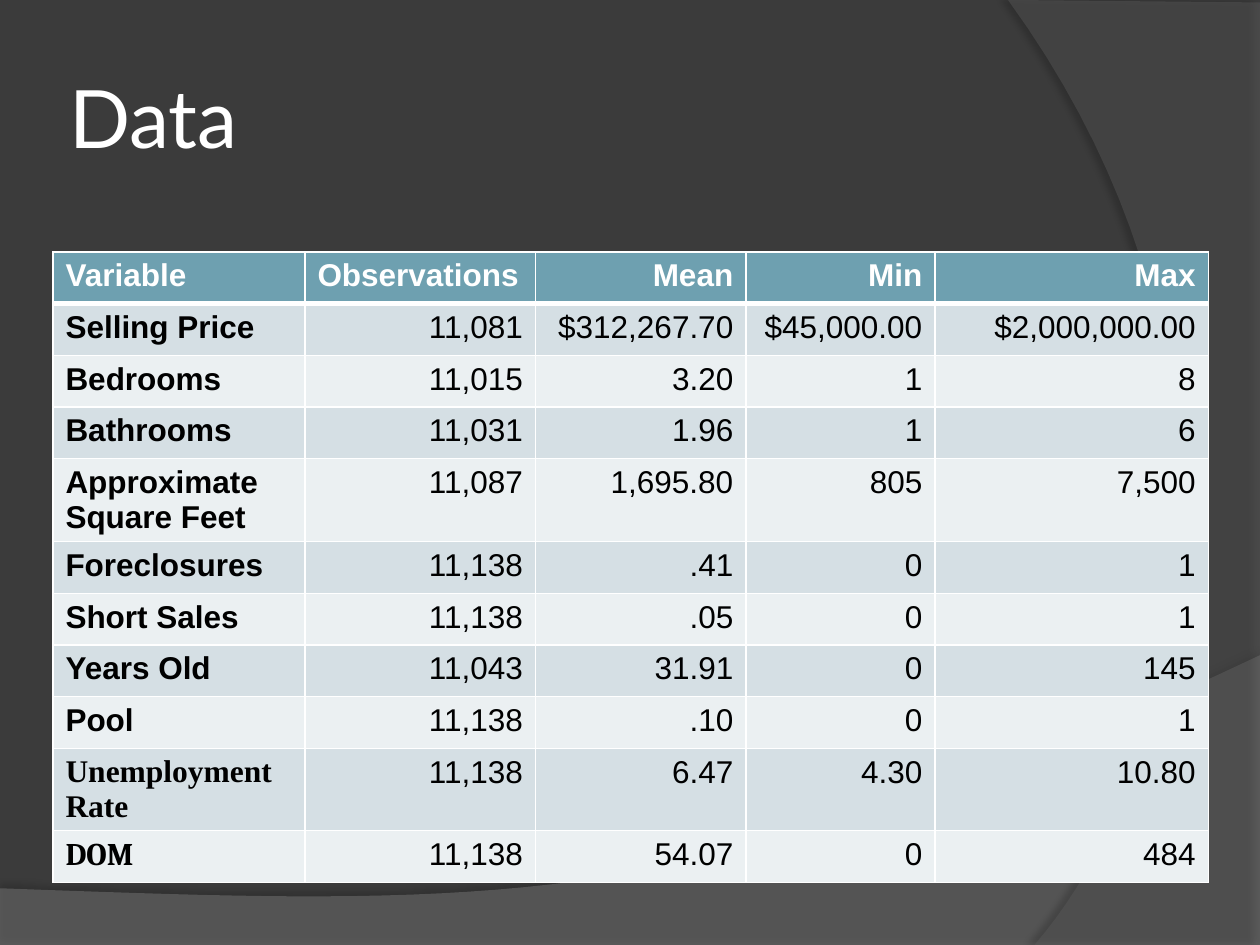
from dataclasses import dataclass

from lxml import etree
from pptx import Presentation
from pptx import util as u
from pptx.dml import color
from pptx.enum import text
from pptx.oxml import ns

Inches = u.Inches
Point = tuple[float, float]
CURVE_STEPS = 40


@dataclass
class Swoosh:
    edge: list[Point]
    curve: tuple[Point, Point, Point]
    fill: str
    opacity: int
    shadow_opacity: int
    shadow_distance: float
    shadow_angle: int


@dataclass
class Variable:
    name: str
    observations: str
    mean: str
    minimum: str
    maximum: str
    name_font: str = "Arial"

    def values(self) -> list[str]:
        return [self.name, self.observations, self.mean, self.minimum, self.maximum]


SWOOSHES = [
    Swoosh([(0, 7.05), (0, 7.51), (10, 7.51), (10, 5.2)],
           ((5.59, 7.29), (3.91, 7.19), (0, 7.05)), "7F7F7F", 45, 35, 3.5, 270),
    Swoosh([(8, 0), (10, 0.02), (10, 7.5), (8.21, 7.5)],
           ((9.35, 6.19), (10.18, 3), (8, 0)), "5E5E5E", 40, 45, 4, 180),
]

HEADER = Variable("Variable", "Observations", "Mean", "Min", "Max")
VARIABLES = [
    Variable("Selling Price", "11,081", "$312,267.70", "$45,000.00", "$2,000,000.00"),
    Variable("Bedrooms", "11,015", "3.20", "1", "8"),
    Variable("Bathrooms", "11,031", "1.96", "1", "6"),
    Variable("Approximate Square Feet", "11,087", "1,695.80", "805", "7,500"),
    Variable("Foreclosures", "11,138", ".41", "0", "1"),
    Variable("Short Sales", "11,138", ".05", "0", "1"),
    Variable("Years Old", "11,043", "31.91", "0", "145"),
    Variable("Pool", "11,138", ".10", "0", "1"),
    Variable("Unemployment Rate", "11,138", "6.47", "4.30", "10.80", "Times New Roman"),
    Variable("DOM", "11,138", "54.07", "0", "484", "Cambria"),
]
COLUMN_WIDTHS = [2, 1.83, 1.67, 1.5, 2.17]
ROW_HEIGHT = 0.41


def paint(fill, rgb: str) -> None:
    fill.solid()
    fill.fore_color.rgb = color.RGBColor.from_string(rgb)


def add_node(parent, tag: str, **attributes):
    values = {key: str(value) for key, value in attributes.items()}
    return etree.SubElement(parent, ns.qn(tag), values)


def add_run(paragraph, words: str, font: str, size: float, rgb: str, bold: bool = False) -> None:
    run = paragraph.add_run()
    run.text = words
    run.font.name = font
    run.font.size = u.Pt(size)
    run.font.bold = bold
    paint(run.font.fill, rgb)


def bezier(start: Point, curve: tuple[Point, Point, Point]) -> list[Point]:
    first, second, end = curve
    points = []
    for step in range(1, CURVE_STEPS + 1):
        t = step / CURVE_STEPS
        s = 1 - t
        points.append(tuple(
            s**3 * a + 3 * s**2 * t * b + 3 * s * t**2 * c + t**3 * d
            for a, b, c, d in zip(start, first, second, end)))
    return points


def draw_swoosh(slide, swoosh: Swoosh) -> None:
    outline = swoosh.edge + bezier(swoosh.edge[-1], swoosh.curve)
    emu = [(Inches(x), Inches(y)) for x, y in outline]
    builder = slide.shapes.build_freeform(*emu[0])
    builder.add_line_segments(emu[1:], close=True)
    shape = builder.convert_to_shape()
    paint(shape.fill, swoosh.fill)
    shape.line.fill.background()
    shape.shadow.inherit = False
    fill_color = shape.element.find(".//" + ns.qn("a:srgbClr"))
    add_node(fill_color, "a:alpha", val=swoosh.opacity * 1000)
    effects = shape.element.find(".//" + ns.qn("a:effectLst"))
    shadow = add_node(effects, "a:outerShdw", blurRad=u.Pt(4),
                      dist=u.Pt(swoosh.shadow_distance),
                      dir=swoosh.shadow_angle * 60000, rotWithShape=0)
    shadow_color = add_node(shadow, "a:srgbClr", val="000000")
    add_node(shadow_color, "a:alpha", val=swoosh.shadow_opacity * 1000)


def draw_title(slide, words: str) -> None:
    title = slide.shapes.title
    title.left, title.top = Inches(0.5), Inches(0.3)
    title.width, title.height = Inches(8.17), Inches(1.25)
    frame = title.text_frame
    frame.word_wrap = True
    frame.vertical_anchor = text.MSO_ANCHOR.MIDDLE
    frame.margin_left = frame.margin_right = Inches(0.05)
    frame.margin_top = frame.margin_bottom = Inches(0.05)
    heading = frame.paragraphs[0]
    heading.alignment = text.PP_ALIGN.LEFT
    add_run(heading, words, "Lato", 46, "FFFFFF")
    slide.shapes.element.append(title.element)


def set_borders(cell, top: float, bottom: float) -> None:
    properties = cell._tc.get_or_add_tcPr()
    widths = {"a:lnL": 1, "a:lnR": 1, "a:lnT": top, "a:lnB": bottom}
    for position, (side, width) in enumerate(widths.items()):
        line = add_node(properties, side, w=u.Pt(width))
        add_node(add_node(line, "a:solidFill"), "a:srgbClr", val="FFFFFF")
        properties.insert(position, line)


def draw_table(slide, rows: list[Variable]) -> None:
    table = slide.shapes.add_table(
        len(rows), len(COLUMN_WIDTHS), Inches(0.42), Inches(2),
        Inches(sum(COLUMN_WIDTHS)), Inches(ROW_HEIGHT * len(rows))).table
    for column, width in zip(table.columns, COLUMN_WIDTHS):
        column.width = Inches(width)
    for r, variable in enumerate(rows):
        table.rows[r].height = Inches(ROW_HEIGHT)
        is_header = r == 0
        band = "6EA0B0" if is_header else ("EBF0F2", "D5DFE4")[r % 2]
        for c, value in enumerate(variable.values()):
            cell = table.cell(r, c)
            paint(cell.fill, band)
            set_borders(cell, 3 if r == 1 else 1, 3 if is_header else 1)
            paragraph = cell.text_frame.paragraphs[0]
            left = c == 0 or (is_header and c == 1)
            paragraph.alignment = text.PP_ALIGN.LEFT if left else text.PP_ALIGN.RIGHT
            add_run(paragraph, value, variable.name_font if c == 0 else "Arial", 18,
                    "FFFFFF" if is_header else "000000", is_header or c == 0)


def main() -> None:
    deck = Presentation()
    deck.slide_width, deck.slide_height = Inches(10), Inches(7.5)
    slide = deck.slides.add_slide(deck.slide_layouts[5])
    paint(slide.background.fill, "3B3B3B")
    for swoosh in SWOOSHES:
        draw_swoosh(slide, swoosh)
    draw_title(slide, "Data")
    draw_table(slide, [HEADER] + VARIABLES)
    deck.save("out.pptx")


if __name__ == "__main__":
    main()
